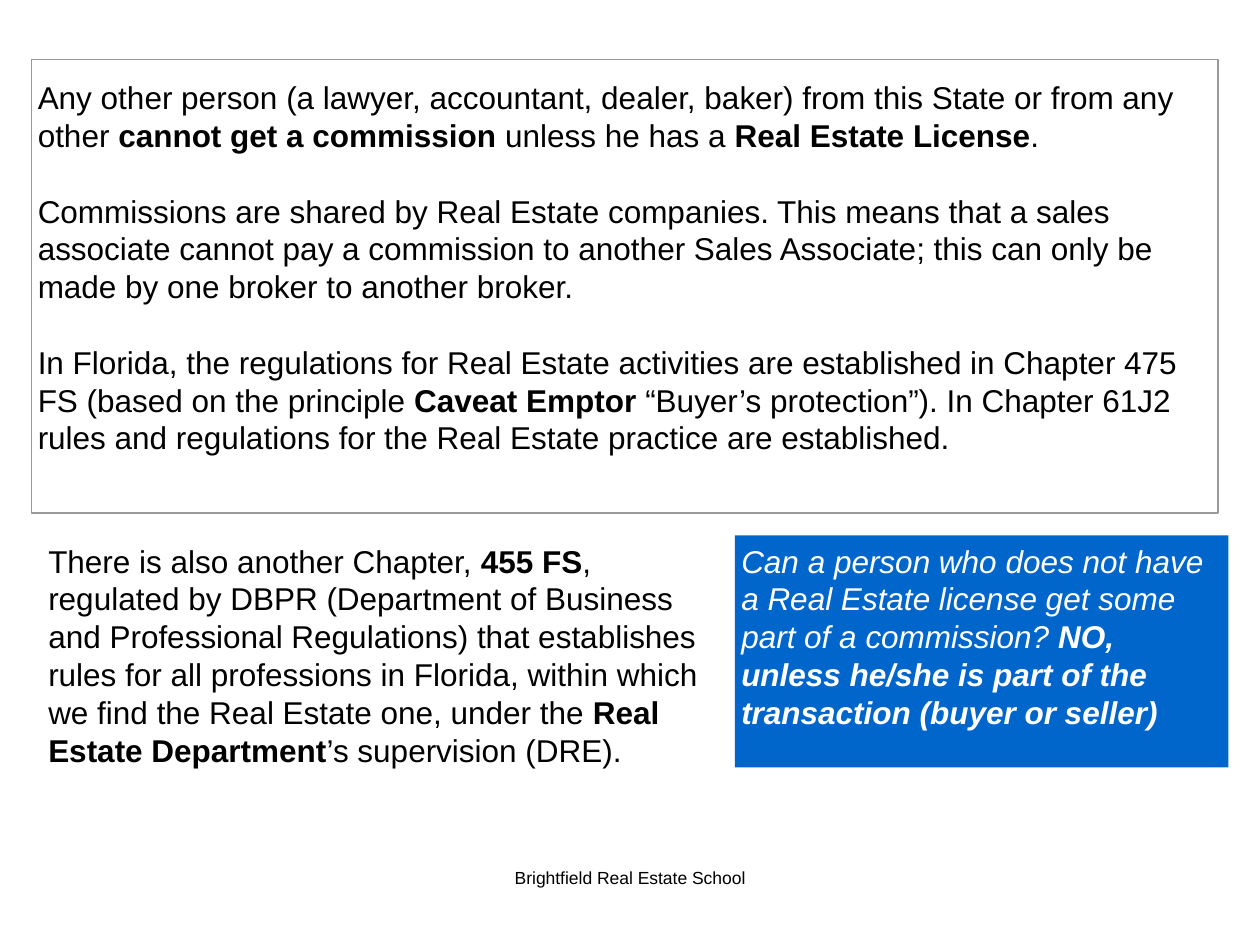
from pptx import Presentation
from pptx import util as u
from pptx.dml.color import RGBColor
from pptx.enum import shapes, text

Pt = u.Pt
COLOURS = {"black": "000000", "white": "FFFFFF", "blue": "0066CC", "outline": "999999"}
INSET = 3.6
LINE = 21.6


def colour(name):
    return RGBColor.from_string(COLOURS[name])


def write(box, paragraphs, size=18, ink="black", italic=False, align=text.PP_ALIGN.LEFT):
    """Fill a box with paragraphs, each a list of spans that alternate regular and bold."""
    frame = box.text_frame
    frame.word_wrap = True
    frame.vertical_anchor = text.MSO_ANCHOR.TOP
    frame.margin_left = frame.margin_right = Pt(INSET)
    frame.margin_top = frame.margin_bottom = Pt(INSET)
    for number, spans in enumerate(paragraphs):
        para = frame.add_paragraph() if number else frame.paragraphs[0]
        para.alignment = align
        para.line_spacing = Pt(size * 1.2)
        para.space_before = Pt(LINE if number else 0)
        para.font.name = "Arial"
        para.font.size = Pt(size)
        para.font.italic = italic
        para.font.color.rgb = colour(ink)
        for position, words in enumerate(spans):
            span = para.add_run()
            span.text = words
            if position % 2:
                span.font.bold = True


deck = Presentation()
deck.slide_width, deck.slide_height = Pt(720), Pt(540)
page = deck.slides.add_slide(deck.slide_layouts[6])

footer = page.shapes.add_textbox(Pt(246), Pt(492), Pt(228), Pt(19.4))
write(footer, [["Brightfield Real Estate School"]], size=10, align=text.PP_ALIGN.CENTER)

rules = page.shapes.add_shape(shapes.MSO_SHAPE.RECTANGLE, Pt(18), Pt(34), Pt(678), Pt(259.2))
rules.shadow.inherit = False
rules.fill.background()
rules.line.color.rgb = colour("outline")
rules.line.width = Pt(0.75)
write(rules, [
    ["Any other person (a lawyer, accountant, dealer, baker) from this State or from any other ",
     "cannot get a commission", " unless he has a ", "Real Estate License", "."],
    ["Commissions are shared by Real Estate companies. This means that a sales associate cannot "
     "pay a commission to another Sales Associate; this can only be made by one broker to "
     "another broker."],
    ["In Florida, the regulations for Real Estate activities are established in Chapter 475 FS "
     "(based on the principle ", "Caveat Emptor ",
     "“Buyer’s protection”). In Chapter 61J2 rules and regulations for the Real Estate "
     "practice are established."],
])
rules.text_frame.vertical_anchor = text.MSO_ANCHOR.MIDDLE
rules.text_frame.margin_bottom = Pt(INSET + LINE)

chapter = page.shapes.add_textbox(Pt(24), Pt(306), Pt(396), Pt(153.4))
write(chapter, [[
    "There is also another Chapter, ", "455 FS",
    ", regulated by DBPR (Department of Business and Professional Regulations) that establishes "
    "rules for all professions in Florida, within which we find the Real Estate one, under the ",
    "Real Estate Department", "’s supervision (DRE).",
]])

question = page.shapes.add_shape(shapes.MSO_SHAPE.RECTANGLE, Pt(420), Pt(306), Pt(282), Pt(132.5))
question.shadow.inherit = False
question.fill.solid()
question.fill.fore_color.rgb = colour("blue")
question.line.fill.background()
write(question, [[
    "Can a person who does not have a Real Estate license get some part of a commission? ",
    "NO, unless he/she is part of the transaction (buyer or seller)",
]], ink="white", italic=True)

deck.save("out.pptx")
